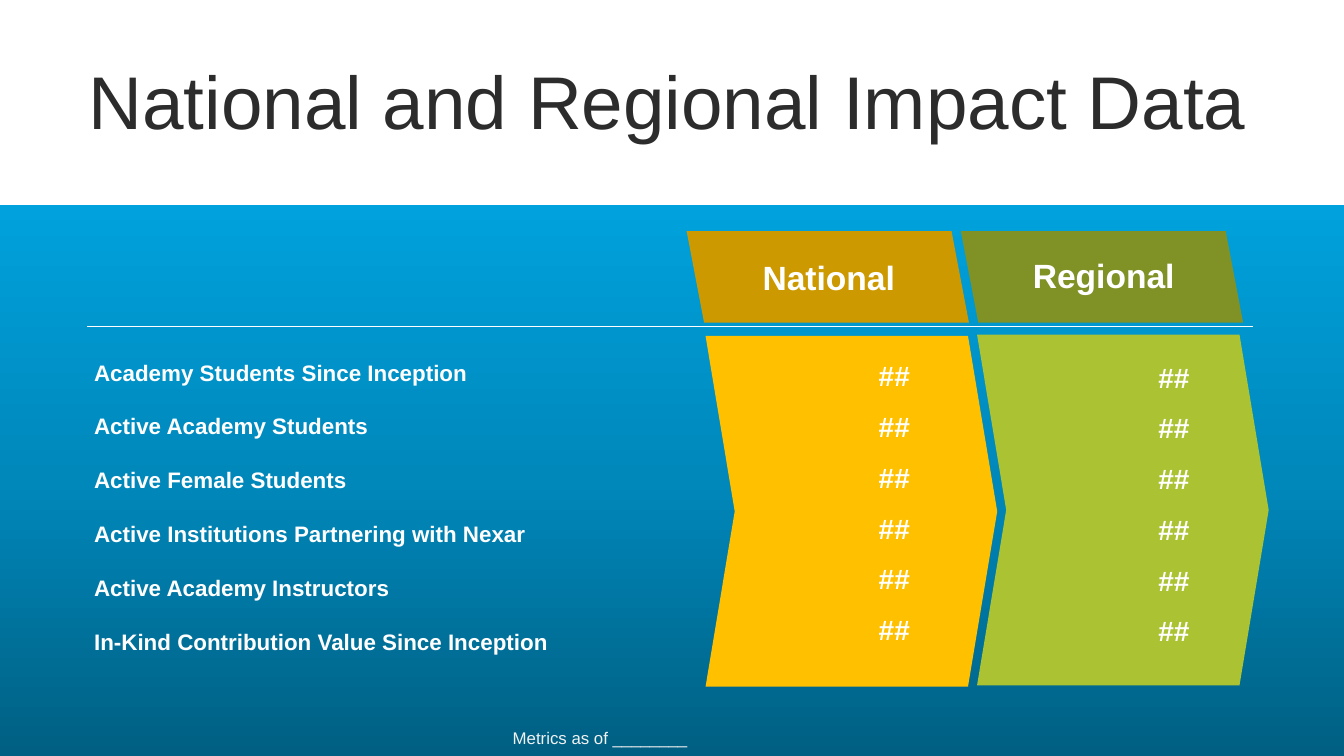
"""Build the slide of national and regional impact data."""
from copy import deepcopy
from dataclasses import dataclass

from lxml.etree import SubElement
from pptx import Presentation
from pptx.dml.color import RGBColor as Rgb
from pptx.enum.shapes import MSO_CONNECTOR as Link, MSO_SHAPE as Kind
from pptx.enum.text import MSO_ANCHOR as Anchor, PP_ALIGN as Align
from pptx.oxml.ns import qn
from pptx.shapes.autoshape import Shape
from pptx.slide import Slide
from pptx.util import Inches, Pt


@dataclass(frozen=True)
class Theme:
    font: str = "Arial"
    ink: str = "2C2C2D"
    white: str = "FFFFFF"
    pale: str = "F2F2F2"
    blues: tuple = (("005F83", 0), ("0088BA", 0.5), ("00A1DD", 1))
    title: int = 40
    head: int = 18
    value: int = 15
    label: int = 12
    note: int = 9


@dataclass(frozen=True)
class Column:
    name: str
    dark: str
    light: str
    tab: float
    body: float
    top: float
    name_at: tuple
    value_at: tuple


THEME = Theme()
LABELS = (
    "Academy Students Since Inception",
    "Active Academy Students",
    "Active Female Students",
    "Active Institutions Partnering with Nexar",
    "Active Academy Instructors",
    "In-Kind Contribution Value Since Inception",
)
COLUMNS = (
    Column("National", "CC9900", "FFC000", 5.11, 5.25, 2.5,
           (4.72, 1.91, 1.94, 0.3), (5.67, 2.73, 1.1, 2.16)),
    Column("Regional", "809126", "ABC233", 7.15, 7.27, 2.49,
           (6.8, 1.9, 1.94, 0.3), (7.75, 2.74, 1.1, 2.16)),
)


def add_text(slide: Slide, lines: tuple, box: tuple, *, size: int,
             color: str = THEME.white, bold: bool = False,
             align: Align = Align.LEFT, anchor: Anchor = Anchor.TOP,
             inset: tuple = (0, 0), gap: float = 0,
             pitch: float | None = None) -> None:
    frame = slide.shapes.add_textbox(*map(Inches, box)).text_frame
    frame.word_wrap = True
    frame.vertical_anchor = anchor
    frame.margin_left = frame.margin_right = Inches(inset[0])
    frame.margin_top = frame.margin_bottom = Inches(inset[1])
    for i, line in enumerate(lines):
        para = frame.add_paragraph() if i else frame.paragraphs[0]
        para.text = line
        para.alignment = align
        if i and gap:
            para.space_before = Pt(gap)
        if pitch:
            para.line_spacing = Pt(pitch)
        font = para.font
        font.name, font.size, font.bold = THEME.font, Pt(size), bold
        font.color.rgb = Rgb.from_string(color)


def add_form(slide: Slide, kind: Kind, box: tuple, color: str = "",
             bend: float | None = None) -> Shape:
    form = slide.shapes.add_shape(kind, *map(Inches, box))
    form.shadow.inherit = False
    form.line.fill.background()
    if color:
        form.fill.solid()
        form.fill.fore_color.rgb = Rgb.from_string(color)
    if bend is not None:
        form.adjustments[0] = bend
    return form


def add_panel(slide: Slide, floor: int) -> None:
    panel = add_form(slide, Kind.RECTANGLE, (0, 1.52, 10, 4.1))
    panel.top = floor - panel.height
    fill = panel.fill
    fill.gradient()
    fill.gradient_angle = 90
    stops = next(panel._element.spPr.iter(qn("a:gsLst")))
    stops.insert(1, deepcopy(stops[0]))
    for stop, (color, place) in zip(fill.gradient_stops, THEME.blues):
        stop.color.rgb = Rgb.from_string(color)
        stop.position = place


def add_column(slide: Slide, col: Column) -> None:
    tab = add_form(slide, Kind.PARALLELOGRAM, (col.tab, 1.72, 2.1, 0.68),
                   col.dark, 0.19)
    tab._element.spPr.xfrm.set("flipH", "1")
    add_form(slide, Kind.CHEVRON, (col.body, col.top, 2.17, 2.61),
             col.light, 0.1)
    add_text(slide, (col.name,), col.name_at, size=THEME.head, bold=True,
             align=Align.RIGHT)
    add_text(slide, ("##",) * len(LABELS), col.value_at, size=THEME.value,
             bold=True, align=Align.RIGHT, gap=13.6, pitch=13.6)


def add_rule(slide: Slide) -> None:
    ends = map(Inches, (0.65, 2.43, 9.32, 2.43))
    rule = slide.shapes.add_connector(Link.STRAIGHT, *ends)
    rule.line.color.rgb = Rgb.from_string(THEME.white)
    rule.line.width = Pt(1)
    SubElement(rule._element.spPr, qn("a:effectLst"))


def main() -> None:
    deck = Presentation()
    deck.slide_width = Inches(10)
    deck.slide_height = deck.slide_width * 9 // 16
    slide = deck.slides.add_slide(deck.slide_layouts[6])
    add_panel(slide, deck.slide_height)
    for col in COLUMNS:
        add_column(slide, col)
    add_rule(slide)
    add_text(slide, LABELS, (0.64, 2.64, 3.78, 2.28), size=THEME.label,
             bold=True, inset=(0.06, 0.03), gap=14.4)
    add_text(slide, ("Metrics as of ________",), (3.13, 5.4, 2.67, 0.18),
             size=THEME.note, color=THEME.pale, align=Align.CENTER,
             anchor=Anchor.MIDDLE)
    add_text(slide, ("National and Regional Impact Data",),
             (0.56, 0.27, 9.07, 0.94), size=THEME.title, color=THEME.ink,
             anchor=Anchor.MIDDLE, inset=(0.1, 0.05))
    deck.save("out.pptx")


if __name__ == "__main__":
    main()
